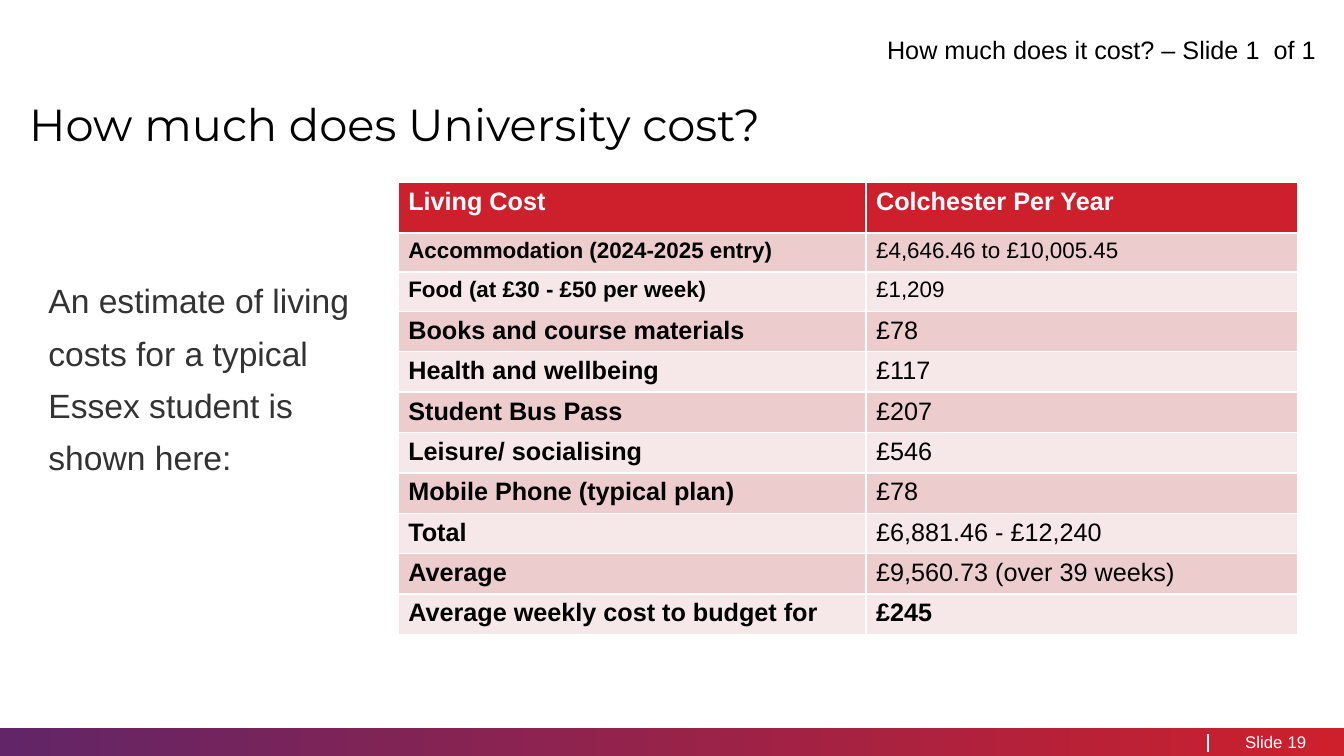
from lxml.etree import SubElement
from pptx import Presentation
from pptx.dml.color import RGBColor
from pptx.enum.shapes import MSO_CONNECTOR, MSO_SHAPE
from pptx.enum.text import MSO_ANCHOR, PP_ALIGN
from pptx.oxml import parse_xml
from pptx.oxml.ns import nsdecls, qn
from pptx.util import Emu, Pt

PX = 9144
WIDTH, HEIGHT = 1333, 750
BLACK, WHITE, GREY = "000000", "FFFFFF", "333333"
RED, PURPLE = "CD202C", "622567"
BANDS = ("EDCCCD", "F6E7E8")

HEADER = ("Living Cost", "Colchester Per Year")
COSTS = [
    ("Accommodation (2024-2025 entry)", "£4,646.46 to £10,005.45", 16),
    ("Food (at £30 - £50 per week)", "£1,209", 16),
    ("Books and course materials", "£78", 18),
    ("Health and wellbeing", "£117", 18),
    ("Student Bus Pass", "£207", 18),
    ("Leisure/ socialising", "£546", 18),
    ("Mobile Phone (typical plan)", "£78", 18),
    ("Total", "£6,881.46 - £12,240", 18),
    ("Average", "£9,560.73 (over 39 weeks)", 18),
    ("Average weekly cost to budget for", "£245", 18),
]
COLUMN_WIDTHS = (464, 428)
HEADER_HEIGHT = 50
ROW_HEIGHTS = {16: 39, 18: 40}
FOOTER_TOP, FOOTER_HEIGHT = 722, 28


def px(length):
    return Emu(length * PX)


def color(value):
    return RGBColor.from_string(value)


def write(frame, text, size=18, font="Arial", fill=BLACK, bold=False,
          align=PP_ALIGN.LEFT, spacing=None):
    paragraph = frame.paragraphs[0]
    paragraph.alignment = align
    if spacing:
        paragraph.line_spacing = spacing
    run = paragraph.add_run()
    run.text = text
    run.font.size = Pt(size)
    run.font.name = font
    run.font.bold = bold
    run.font.color.rgb = color(fill)


def add_text(slide, text, box, insets=(0, 5), anchor=MSO_ANCHOR.TOP, **style):
    frame = slide.shapes.add_textbox(*map(px, box)).text_frame
    frame.word_wrap = True
    frame.vertical_anchor = anchor
    frame.margin_left = frame.margin_right = 0
    frame.margin_top, frame.margin_bottom = map(px, insets)
    write(frame, text, **style)


def fill_cell(cell, text, background, **style):
    write(cell.text_frame, text, **style)
    cell.fill.solid()
    cell.fill.fore_color.rgb = color(background)
    properties = cell._tc.get_or_add_tcPr()
    for index, side in enumerate("LRTB"):
        properties.insert(index, parse_xml(
            f'<a:ln{side} {nsdecls("a")} w="{Pt(1.14)}"><a:solidFill>'
            f'<a:srgbClr val="{WHITE}"/></a:solidFill></a:ln{side}>'))


def add_footer(slide):
    bar = slide.shapes.add_shape(
        MSO_SHAPE.RECTANGLE, 0, px(FOOTER_TOP), px(WIDTH), px(FOOTER_HEIGHT))
    bar.shadow.inherit = False
    bar.line.fill.background()
    bar.fill.gradient()
    bar.fill.gradient_angle = 0
    for stop, value in zip(bar.fill.gradient_stops, (PURPLE, RED)):
        stop.color.rgb = color(value)
    divider = slide.shapes.add_connector(
        MSO_CONNECTOR.STRAIGHT, px(1198), px(728), px(1198), px(746))
    divider.line.color.rgb = color(WHITE)
    divider.line.width = Pt(1)
    SubElement(divider._element.spPr, qn("a:effectLst"))
    for text, left, width, align in (("Slide", 1225, 47, PP_ALIGN.RIGHT),
                                     ("19", 1277, 33, PP_ALIGN.LEFT)):
        add_text(slide, text, (left, FOOTER_TOP, width, FOOTER_HEIGHT), (5, 5),
                 MSO_ANCHOR.MIDDLE, size=12, fill=WHITE, align=align)


def add_cost_table(slide):
    heights = [HEADER_HEIGHT] + [ROW_HEIGHTS[size] for _, _, size in COSTS]
    table = slide.shapes.add_table(
        len(heights), len(COLUMN_WIDTHS), px(395), px(181),
        px(sum(COLUMN_WIDTHS)), px(sum(heights))).table
    for column, width in zip(table.columns, COLUMN_WIDTHS):
        column.width = px(width)
    for row, height in zip(table.rows, heights):
        row.height = px(height)
    for column, text in enumerate(HEADER):
        fill_cell(table.cell(0, column), text, RED, fill=WHITE, bold=True)
    for index, (label, amount, size) in enumerate(COSTS):
        band = BANDS[index % 2]
        is_last = index == len(COSTS) - 1
        fill_cell(table.cell(index + 1, 0), label, band, size=size, bold=True)
        fill_cell(table.cell(index + 1, 1), amount, band, size=size, bold=is_last)


def main():
    presentation = Presentation()
    presentation.slide_width, presentation.slide_height = px(WIDTH), px(HEIGHT)
    slide = presentation.slides.add_slide(presentation.slide_layouts[6])
    add_footer(slide)
    add_text(slide, "How much does it cost? – Slide 1  of 1", (680, 0, 625, 97),
             (0, 8), MSO_ANCHOR.MIDDLE, align=PP_ALIGN.RIGHT, spacing=1.3)
    add_text(slide, "How much does University cost?", (29, 80, 953, 73), (0, 0),
             size=32, font="Montserrat", spacing=1.3)
    add_text(slide, "An estimate of living costs for a typical Essex student is shown here:",
             (48, 261, 299, 227), (5, 5), size=24, fill=GREY, spacing=1.3)
    add_cost_table(slide)
    presentation.save("out.pptx")


if __name__ == "__main__":
    main()
